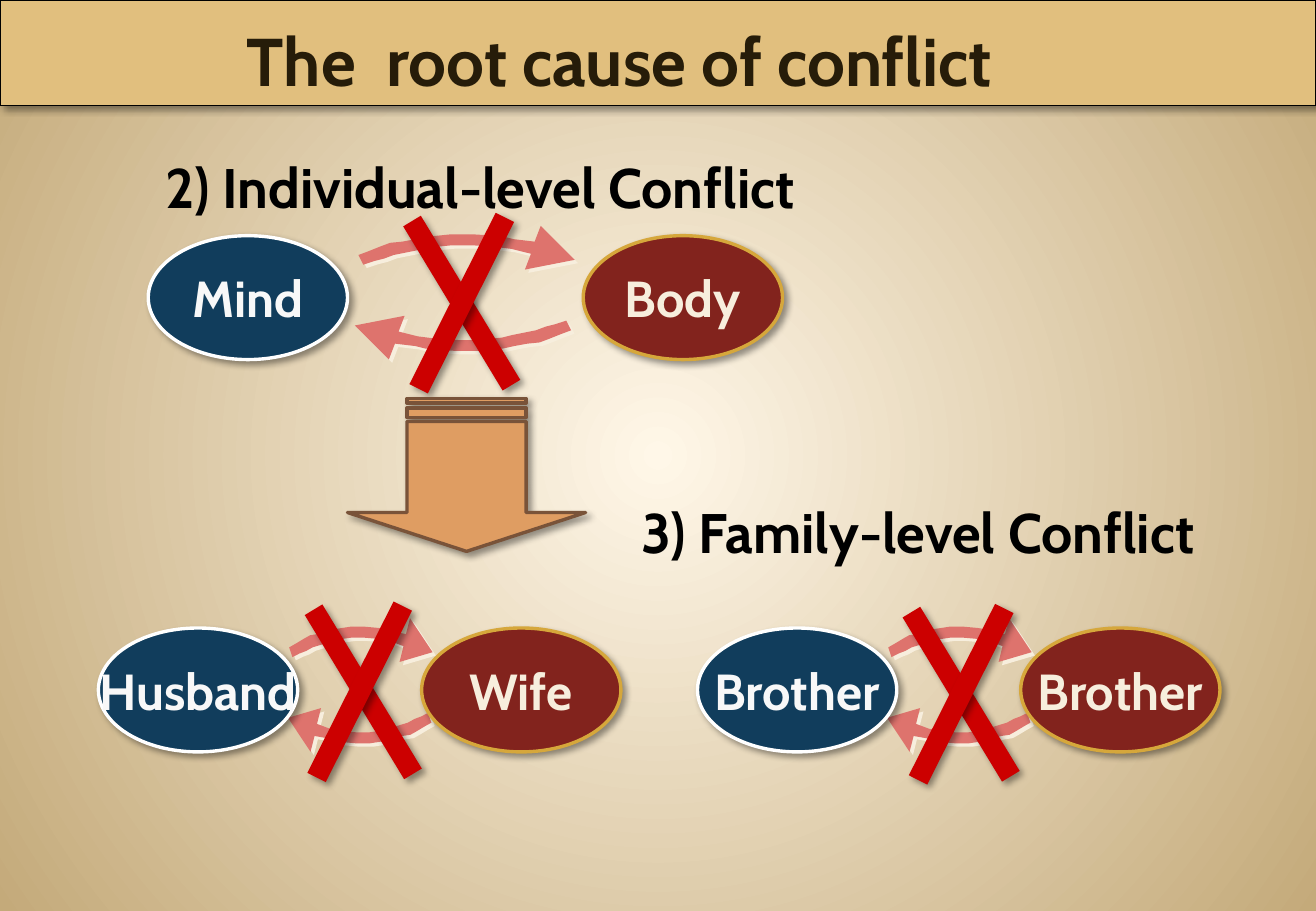
"""Build the slide on the root cause of conflict."""
from lxml.etree import SubElement
from pptx import Presentation
from pptx.dml.color import RGBColor
from pptx.enum.shapes import MSO_SHAPE as SHAPE
from pptx.enum.text import MSO_ANCHOR as ANCHOR, PP_ALIGN as ALIGN
from pptx.oxml.ns import qn
from pptx.util import Pt

SCALE = 9144
WIDTH, HEIGHT = 1083, 750
FONT = "Cabin"
COLORS = {
    "center": "FFF7E8", "edge": "C4AA7A", "band": "E1BF7E", "title": "261C09",
    "black": "000000", "white": "FFFFFF", "blue": "113D5C", "blue_text": "F8F8F8",
    "maroon": "82231D", "gold": "D6A73B", "cream": "F7EEDD", "pink": "DE736D",
    "red": "CC0000", "orange": "DF9D62", "brown": "795339",
}
SOFT = {"color": "black", "alpha": 40, "blur": 4, "dist": 3}
HARD = {"color": "cream", "alpha": 100, "blur": 0, "dist": 2.8}

TITLE = "The  root cause of conflict"
HEADINGS = [
    ("2) Individual-level Conflict", (126, 121, 655, 66)),
    ("3) Family-level Conflict", (518, 405, 501, 66)),
]
PAIRS = [
    {"names": ("Mind", "Body"), "lefts": (122, 480), "top": 194,
     "arrow_lefts": (295, 292), "arrow_width": 178, "bar_lefts": (301, 301), "bar_top": 241},
    {"names": ("Brother", "Brother"), "lefts": (574, 840), "top": 517,
     "arrow_lefts": (731, 730), "arrow_width": 118, "bar_lefts": (712, 712), "bar_top": 563},
    {"names": ("Husband", "Wife"), "lefts": (81, 347), "top": 517,
     "arrow_lefts": (238, 237), "arrow_width": 118, "bar_lefts": (220, 217), "bar_top": 561},
]
OVAL_STYLES = [("blue", "white", "blue_text"), ("maroon", "gold", "cream")]
OVAL_SIZE = (164, 102)
BAR_SIZE = (158, 17)
BAR_ANGLES = (238.8, 296.7)
ARROW_RISE, ARROWS_HEIGHT, CURVE_WIDTH = 8, 110, 178
CURVE = [
    (142, 23), (126, 19), (118, 18), (110, 17), (93, 16), (77, 16), (67, 17), (57, 18),
    (49, 20), (39, 22), (29, 24), (21, 27), (13, 29), (4, 32), (0, 24), (8, 21),
    (18, 17), (26, 14), (36, 13), (47, 11), (56, 9), (66, 8), (76, 7), (85, 7),
    (94, 7), (111, 8), (120, 9), (128, 11), (145, 13), (150, 0), (178, 28), (137, 36),
]
DOWN_ARROW = [
    [(482, 422), (433, 422), (433, 347), (335, 347), (335, 422), (286, 422), (384, 454)],
    [(433, 336), (335, 336), (335, 344), (433, 344)],
    [(433, 328), (335, 328), (335, 332), (433, 332)],
]


def px(n):
    return round(n * SCALE)


def rgb(name):
    return RGBColor.from_string(COLORS[name])


def style(sp, fill, line=None, weight=2, shadow=SOFT):
    sp.fill.solid()
    sp.fill.fore_color.rgb = rgb(fill)
    if line:
        sp.line.color.rgb = rgb(line)
        sp.line.width = Pt(weight)
    else:
        sp.line.fill.background()
    sp.shadow.inherit = False
    effects = sp._element.spPr.find(qn("a:effectLst"))
    outer = SubElement(effects, qn("a:outerShdw"), blurRad=str(Pt(shadow["blur"])),
                       dist=str(Pt(shadow["dist"])), dir="2700000", algn="ctr", rotWithShape="0")
    color = SubElement(outer, qn("a:srgbClr"), val=COLORS[shadow["color"]])
    SubElement(color, qn("a:alpha"), val=str(shadow["alpha"] * 1000))


def add_text(sp, text, size, color, align=ALIGN.CENTER, **frame):
    tf = sp.text_frame
    for key, value in frame.items():
        setattr(tf, key, value)
    p = tf.paragraphs[0]
    p.alignment = align
    r = p.add_run()
    r.text = text
    for key, value in {"name": FONT, "size": Pt(size), "bold": True}.items():
        setattr(r.font, key, value)
    r.font.color.rgb = rgb(color)


def add_shape(s, kind, box):
    return s.shapes.add_shape(kind, *map(px, box))


def add_outline(s, contours):
    contours = [[(px(x), px(y)) for x, y in points] for points in contours]
    builder = s.shapes.build_freeform(*contours[0][0])
    for i, points in enumerate(contours):
        if i:
            builder.move_to(*points[0])
        builder.add_line_segments(points[1:], close=True)
    return builder.convert_to_shape()


def add_bar(s, pair, i):
    bar = add_shape(s, SHAPE.RECTANGLE, (pair["bar_lefts"][i], pair["bar_top"], *BAR_SIZE))
    bar.rotation = BAR_ANGLES[i]
    style(bar, "red")


def add_pair(s, pair):
    width, top = pair["arrow_width"], pair["top"] - ARROW_RISE
    there, back = pair["arrow_lefts"]
    ratio = width / CURVE_WIDTH
    forward = [(there + x * ratio, top + y) for x, y in CURVE]
    backward = [(back + width - x * ratio, top + ARROWS_HEIGHT - y) for x, y in CURVE]
    for points in (backward, forward):
        style(add_outline(s, [points]), "pink", shadow=HARD)
    add_bar(s, pair, 0)
    for name, left, (fill, line, color) in zip(pair["names"], pair["lefts"], OVAL_STYLES):
        oval = add_shape(s, SHAPE.OVAL, (left, pair["top"], *OVAL_SIZE))
        style(oval, fill, line)
        add_text(oval, name, 30, color, word_wrap=False, vertical_anchor=ANCHOR.MIDDLE)
    add_bar(s, pair, 1)


def set_background(s):
    fill = s.background.fill
    fill.gradient()
    for stop, name, position in zip(fill.gradient_stops, ("center", "edge"), (0, 1)):
        stop.color.rgb = rgb(name)
        stop.position = position
    grad = s._element.find(".//" + qn("a:gradFill"))
    grad.remove(grad.find(qn("a:lin")))
    circle = SubElement(grad, qn("a:path"), path="circle")
    SubElement(circle, qn("a:fillToRect"), {side: "50000" for side in "ltrb"})


def main():
    prs = Presentation()
    prs.slide_width, prs.slide_height = px(WIDTH), px(HEIGHT)
    s = prs.slides.add_slide(prs.slide_layouts[6])
    set_background(s)
    for pair in PAIRS:
        add_pair(s, pair)
    style(add_outline(s, DOWN_ARROW), "orange", "brown")
    for text, box in HEADINGS:
        sp = s.shapes.add_textbox(*map(px, box))
        add_text(sp, text, 33, "black", ALIGN.LEFT, word_wrap=True)
    band = add_shape(s, SHAPE.RECTANGLE, (0, 0, WIDTH, 87))
    style(band, "band", "black", 0.75)
    add_text(band, TITLE, 40, "title", word_wrap=True, vertical_anchor=ANCHOR.BOTTOM,
             margin_right=px(73))
    prs.save("out.pptx")


if __name__ == "__main__":
    main()
